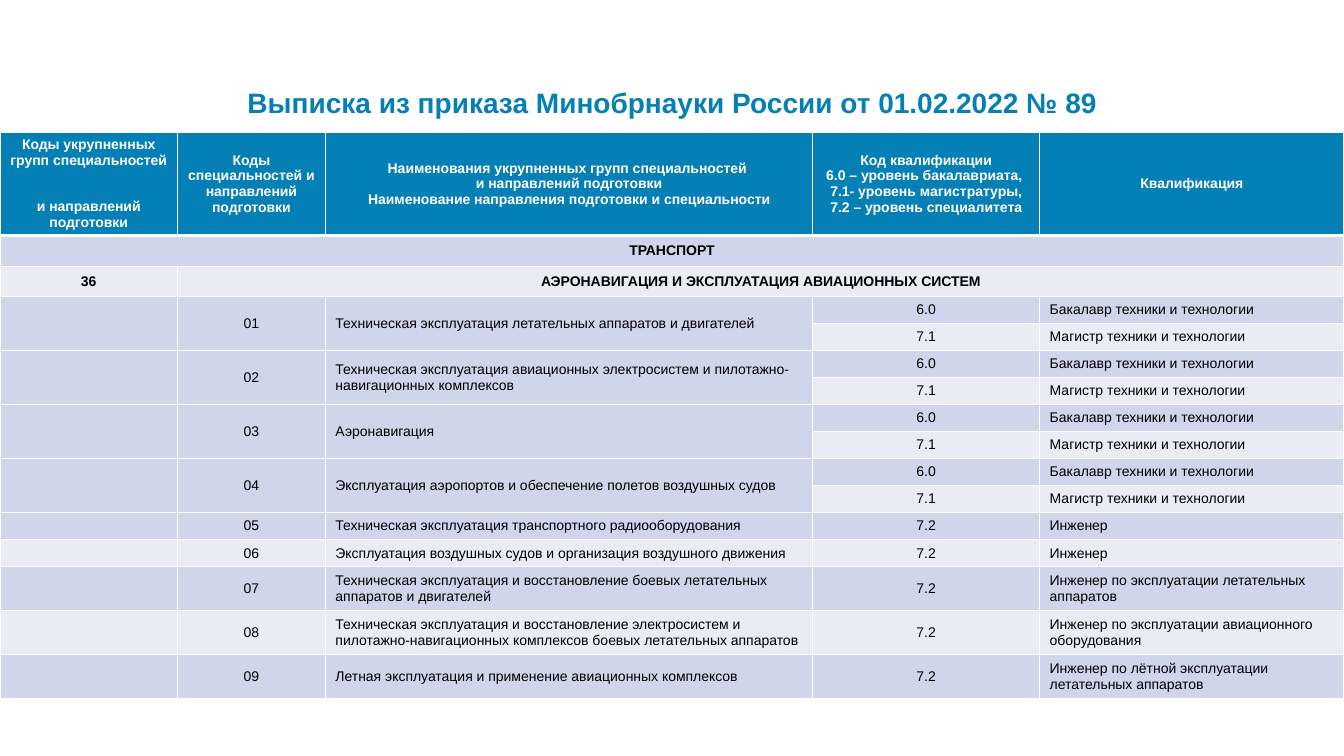
from dataclasses import dataclass

from lxml.etree import SubElement
from pptx import Presentation
from pptx.dml.color import RGBColor as RGB
from pptx.enum.text import MSO_ANCHOR as Anchor, PP_ALIGN as Align
from pptx.oxml.ns import qn
from pptx.util import Cm, Pt


@dataclass(frozen=True)
class Theme:
    font: str = "Arial"
    blue: str = "0480B7"
    white: str = "FFFFFF"
    black: str = "000000"
    bands: tuple = ("E9EBF5", "CFD5EA")
    head: int = 20
    body: int = 10
    thin: int = 1
    thick: int = 3


TITLE = "Выписка из приказа Минобрнауки России от 01.02.2022 № 89"
WIDTHS = (4.47, 3.73, 12.28, 5.72, 7.67)
HEADS = (
    "Коды укрупненных групп специальностей \vи направлений подготовки",
    "Коды специальностей и направлений подготовки",
    "Наименования укрупненных групп специальностей \nи направлений подготовки\n"
    "Наименование направления подготовки и специальности",
    "Код квалификации\n6.0 – уровень бакалавриата, \n"
    "7.1- уровень магистратуры,\n7.2 – уровень специалитета",
    "Квалификация",
)
FIELD = "ТРАНСПОРТ"
GROUP = ("36", "АЭРОНАВИГАЦИЯ И ЭКСПЛУАТАЦИЯ АВИАЦИОННЫХ СИСТЕМ")
DEGREES = (("6.0", "Бакалавр техники и технологии"),
           ("7.1", "Магистр техники и технологии"))


def expert(area=""):
    return (("7.2", "Инженер" + area),)


# Name of the course, its qualifications, row height in cm
COURSES = (
    ("Техническая эксплуатация летательных аппаратов и двигателей", DEGREES, 0.68),
    ("Техническая эксплуатация авиационных электросистем и "
     "пилотажно-навигационных комплексов", DEGREES, 0.68),
    ("Аэронавигация", DEGREES, 0.68),
    ("Эксплуатация аэропортов и обеспечение полетов воздушных судов", DEGREES, 0.68),
    ("Техническая эксплуатация транспортного радиооборудования", expert(), 0.68),
    ("Эксплуатация воздушных судов и организация воздушного движения", expert(), 0.68),
    ("Техническая эксплуатация и восстановление боевых летательных "
     "аппаратов и двигателей",
     expert(" по эксплуатации летательных аппаратов"), 1.11),
    ("Техническая эксплуатация и восстановление электросистем и "
     "пилотажно-навигационных комплексов боевых летательных аппаратов",
     expert(" по эксплуатации авиационного оборудования"), 1.11),
    ("Летная эксплуатация и применение авиационных комплексов",
     expert(" по лётной эксплуатации летательных аппаратов"), 1.11),
)


def write(frame, text, *, font, size, color, bold=False, align=Align.LEFT):
    frame.text = text
    for para in frame.paragraphs:
        para.alignment = align
        for run in para.runs:
            run.font.name = font
            run.font.size = Pt(size)
            run.font.bold = bold
            run.font.color.rgb = RGB.from_string(color)
        if not para.runs:
            # Keeps an empty cell from stretching its row
            SubElement(para._p, qn("a:endParaRPr"), sz=str(size * 100))


def edge(cell, side, width, color):
    line = SubElement(cell._tc.get_or_add_tcPr(), qn("a:ln" + side),
                      w=str(Pt(width)))
    fill = SubElement(line, qn("a:solidFill"))
    SubElement(fill, qn("a:srgbClr"), val=color)


class Deck:
    def __init__(self, theme):
        self.theme = theme
        self.show = Presentation()
        self.show.slide_width = Cm(33.87)
        self.show.slide_height = Cm(19.05)
        self.slide = self.show.slides.add_slide(self.show.slide_layouts[5])

    def title(self, text, left, top, width, height):
        box = self.slide.shapes.title
        box.left, box.top = Cm(left), Cm(top)
        box.width, box.height = Cm(width), Cm(height)
        look = self.theme
        write(box.text_frame, text, font=look.font, size=look.head,
              color=look.blue, bold=True, align=Align.CENTER)

    def table(self, rows, heights, spans, top):
        """Draw rows of text; spans holds (row, column, last row, last column)."""
        grid = self.slide.shapes.add_table(
            len(rows), len(WIDTHS), 0, Cm(top),
            Cm(sum(WIDTHS)), Cm(sum(heights))).table
        for col, width in zip(grid.columns, WIDTHS):
            col.width = Cm(width)
        for r, (texts, height) in enumerate(zip(rows, heights)):
            grid.rows[r].height = Cm(height)
            for c, text in enumerate(texts):
                self.cell(grid.cell(r, c), r, c, text)
        for r, c, end, last in spans:
            grid.cell(r, c).merge(grid.cell(end, last))

    def cell(self, cell, r, c, text):
        look = self.theme
        for side in "LRTB":
            heavy = (r, side) in ((0, "B"), (1, "T"))
            edge(cell, side, look.thick if heavy else look.thin, look.white)
        cell.fill.solid()
        shade = look.bands[r % 2] if r else look.blue
        cell.fill.fore_color.rgb = RGB.from_string(shade)
        cell.vertical_anchor = Anchor.MIDDLE
        plain = r > 2 and c in (2, 4)
        write(cell.text_frame, text, font=look.font, size=look.body,
              color=look.black if r else look.white, bold=r < 3,
              align=Align.LEFT if plain else Align.CENTER)


def main():
    rows = [HEADS, (FIELD, "", "", "", ""), (*GROUP, "", "", "")]
    heights = [2.39, 0.77, 0.77]
    spans = [(1, 0, 1, 4), (2, 1, 2, 4)]
    for num, (name, grades, height) in enumerate(COURSES, 1):
        start = len(rows)
        for i, grade in enumerate(grades):
            lead = ("", "", "") if i else ("", f"{num:02}", name)
            rows.append((*lead, *grade))
            heights.append(height)
        if len(grades) > 1:
            spans += [(start, c, len(rows) - 1, c) for c in range(3)]

    deck = Deck(Theme())
    deck.title(TITLE, 1.83, 2.01, 30.23, 1.12)
    deck.table(rows, heights, spans, 3.33)
    deck.show.save("out.pptx")


if __name__ == "__main__":
    main()
